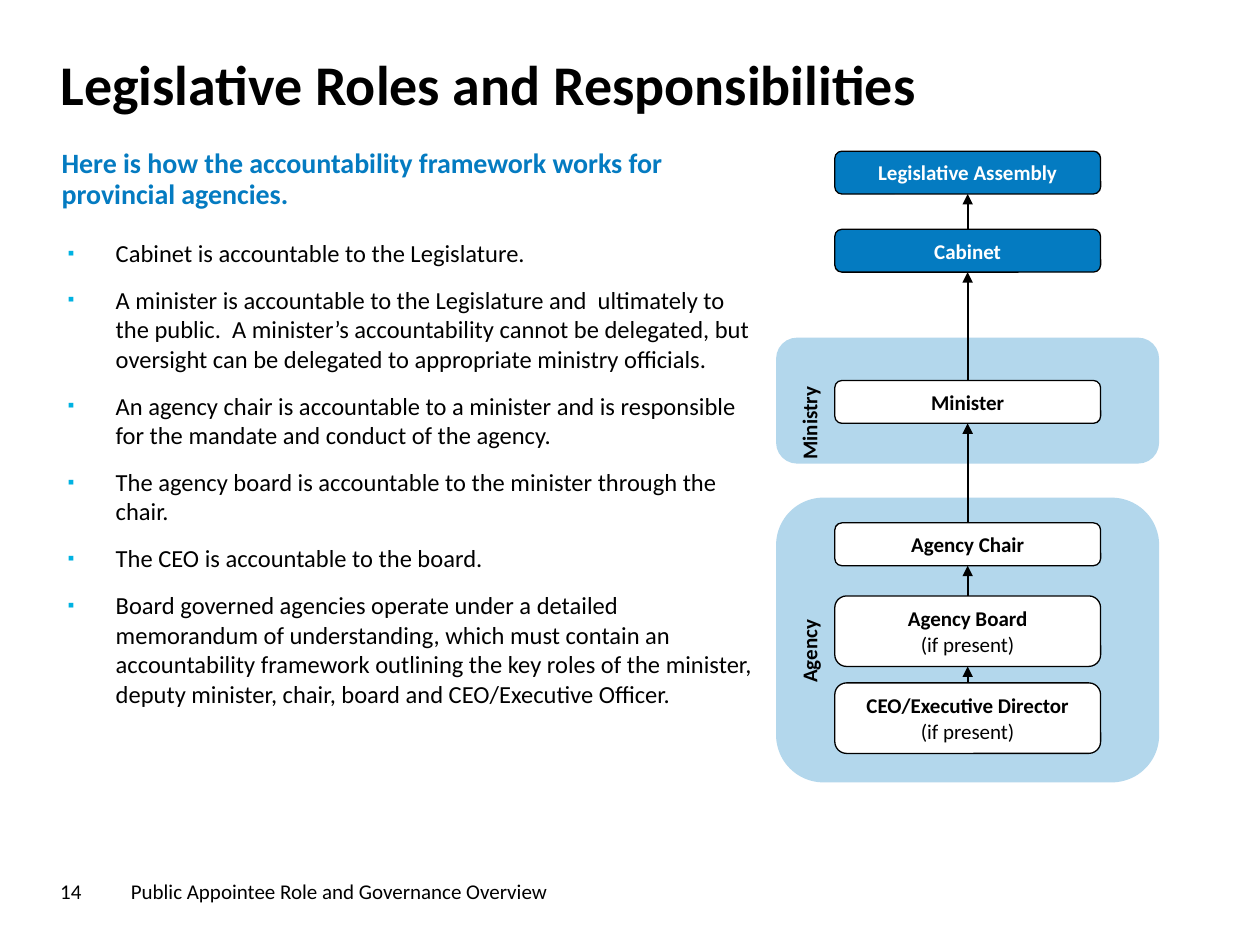
from dataclasses import dataclass

from lxml.etree import SubElement
from pptx import Presentation
from pptx.dml.color import RGBColor
from pptx.enum.shapes import MSO_CONNECTOR, MSO_SHAPE
from pptx.enum.text import MSO_ANCHOR, MSO_AUTO_SIZE, PP_ALIGN
from pptx.oxml.ns import qn
from pptx.util import Inches, Pt


@dataclass(frozen=True)
class Theme:
    font: str = "Calibri"
    black: str = "000000"
    white: str = "FFFFFF"
    blue: str = "047BC1"
    pale: str = "B3D7EC"
    bullet: str = "00B2E2"
    title: int = 32
    lead: int = 16
    body: int = 14
    label: int = 12


THEME = Theme()

TITLE = "Legislative Roles and Responsibilities"
LEAD = "Here is how the accountability framework works for provincial agencies."
BULLETS = [
    "Cabinet is accountable to the Legislature.",
    "A minister is accountable to the Legislature and  ultimately to the public.  "
    "A minister’s accountability cannot be delegated, but oversight can be "
    "delegated to appropriate ministry officials.",
    "An agency chair is accountable to a minister and is responsible for the "
    "mandate and conduct of the agency.",
    "The agency board is accountable to the minister through the chair.",
    "The CEO is accountable to the board.",
    "Board governed agencies operate under a detailed memorandum of understanding, "
    "which must contain an accountability framework outlining the key roles of the "
    "minister, deputy minister, chair, board and CEO/Executive Officer.",
]
PAGE, FOOTER = "14", "Public Appointee Role and Governance Overview"

# Chain of accountability, top down: lines of text, top, fill, text colour
CHAIN = [
    (["Legislative Assembly"], 1.2, THEME.blue, THEME.white),
    (["Cabinet"], 1.82, THEME.blue, THEME.white),
    (["Minister"], 3.02, THEME.white, THEME.black),
    (["Agency Chair"], 4.15, THEME.white, THEME.black),
    (["Agency Board", "(if present)"], 4.73, THEME.white, THEME.black),
    (["CEO/Executive Director", "(if present)"], 5.42, THEME.white, THEME.black),
]
# Panels behind the chain: label, top, height, centre of label
PANELS = [("Ministry", 2.68, 1, 3.36), ("Agency", 3.95, 2.26, 5.17)]

PANEL_LEFT, PANEL_WIDTH = 6.16, 3.04
BOX_WIDTH = 2.11
BOX_LEFT = PANEL_LEFT + (PANEL_WIDTH - BOX_WIDTH) / 2
BOX_HEIGHTS = {1: 0.34, 2: 0.56}  # by number of text lines
LABEL_LEFT, LABEL_WIDTH, LABEL_HEIGHT = 6.26, 0.32, 1.1
MARGIN, TEXT_WIDTH = 0.38, 5.69


def color(hex_code):
    return RGBColor.from_string(hex_code)


def style(paragraph, size, hex_code=THEME.black, bold=False):
    font = paragraph.font
    font.name, font.size, font.bold = THEME.font, Pt(size), bold
    font.color.rgb = color(hex_code)


def add_text(slide, text, left, top, width, height, size, anchor=MSO_ANCHOR.TOP):
    """Add a wrapping one-paragraph text box and return its text frame."""
    box = slide.shapes.add_textbox(*map(Inches, (left, top, width, height)))
    frame = box.text_frame
    frame.word_wrap, frame.vertical_anchor = True, anchor
    frame.text = text
    style(frame.paragraphs[0], size)
    return frame


def add_round_box(slide, left, top, width, height, fill):
    box = slide.shapes.add_shape(
        MSO_SHAPE.ROUNDED_RECTANGLE, *map(Inches, (left, top, width, height)))
    box.shadow.inherit = False
    box.fill.solid()
    box.fill.fore_color.rgb = color(fill)
    return box


def add_bullet(paragraph):
    properties = paragraph._p.get_or_add_pPr()
    properties.set("marL", str(Inches(0.38)))
    properties.set("indent", str(-Inches(0.38)))
    tint = SubElement(properties, qn("a:buClr"))
    SubElement(tint, qn("a:srgbClr"), val=THEME.bullet)
    SubElement(properties, qn("a:buSzPct"), val="75000")
    SubElement(properties, qn("a:buFont"), typeface=THEME.font)
    SubElement(properties, qn("a:buChar"), char="▪")


def add_arrow(slide, lower, upper):
    """Point from the top of the lower box to the bottom of the upper one."""
    arrow = slide.shapes.add_connector(MSO_CONNECTOR.STRAIGHT, 0, 0, 0, 0)
    arrow.begin_connect(lower, 0)
    arrow.end_connect(upper, 2)
    arrow.line.width = Pt(1.25)
    arrow.line.color.rgb = color(THEME.black)
    SubElement(arrow.line._get_or_add_ln(), qn("a:tailEnd"), type="triangle")
    SubElement(arrow._element.spPr, qn("a:effectLst"))


def add_title(slide):
    title = slide.shapes.title
    title.left, title.top, title.width, title.height = map(
        Inches, (MARGIN, 0.4, 9.25, 1.08))
    frame = title.text_frame
    frame.text = TITLE
    frame.auto_size = MSO_AUTO_SIZE.NONE
    frame.vertical_anchor = MSO_ANCHOR.TOP
    paragraph = frame.paragraphs[0]
    paragraph.alignment, paragraph.line_spacing = PP_ALIGN.LEFT, 0.9
    style(paragraph, THEME.title, bold=True)


def add_copy(slide):
    lead = add_text(slide, LEAD, MARGIN + 0.01, 1.14, TEXT_WIDTH, 0.87, THEME.lead)
    lead.paragraphs[0].line_spacing = 0.9
    style(lead.paragraphs[0], THEME.lead, THEME.blue, bold=True)

    body = add_text(slide, "\n".join(BULLETS), 0.44, 1.84, TEXT_WIDTH, 4.63, THEME.body)
    for index, paragraph in enumerate(body.paragraphs):
        add_bullet(paragraph)
        paragraph.space_before = Pt(10 if index else 0)
        style(paragraph, THEME.body)

    for text, left, width in [(PAGE, MARGIN, 0.56), (FOOTER, MARGIN + 0.56, 3.54)]:
        add_text(slide, text, left, 6.87, width, 0.4, THEME.label, MSO_ANCHOR.MIDDLE)


def add_panels(slide):
    for label, top, height, center in PANELS:
        panel = add_round_box(slide, PANEL_LEFT, top, PANEL_WIDTH, height, THEME.pale)
        panel.line.fill.background()
        frame = add_text(slide, label, LABEL_LEFT, center - LABEL_HEIGHT / 2,
                         LABEL_WIDTH, LABEL_HEIGHT, THEME.label, MSO_ANCHOR.MIDDLE)
        frame.margin_left = frame.margin_right = 0
        frame._txBody.bodyPr.set("vert", "vert270")
        frame.paragraphs[0].alignment = PP_ALIGN.CENTER
        style(frame.paragraphs[0], THEME.label, bold=True)


def add_chain(slide):
    boxes = []
    for lines, top, fill, text_color in CHAIN:
        box = add_round_box(slide, BOX_LEFT, top, BOX_WIDTH, BOX_HEIGHTS[len(lines)], fill)
        box.line.color.rgb, box.line.width = color(THEME.black), Pt(0.75)
        frame = box.text_frame
        frame.text = "\n".join(lines)
        frame.word_wrap, frame.vertical_anchor = True, MSO_ANCHOR.MIDDLE
        for index, paragraph in enumerate(frame.paragraphs):
            paragraph.alignment = PP_ALIGN.CENTER
            style(paragraph, THEME.label, text_color, bold=index == 0)
        boxes.append(box)
    for upper, lower in zip(boxes, boxes[1:]):
        add_arrow(slide, lower, upper)


def main():
    deck = Presentation()
    deck.slide_width, deck.slide_height = Inches(10), Inches(7.5)
    slide = deck.slides.add_slide(deck.slide_layouts.get_by_name("Title Only"))
    add_title(slide)
    add_copy(slide)
    add_panels(slide)
    add_chain(slide)
    deck.save("out.pptx")


if __name__ == "__main__":
    main()
